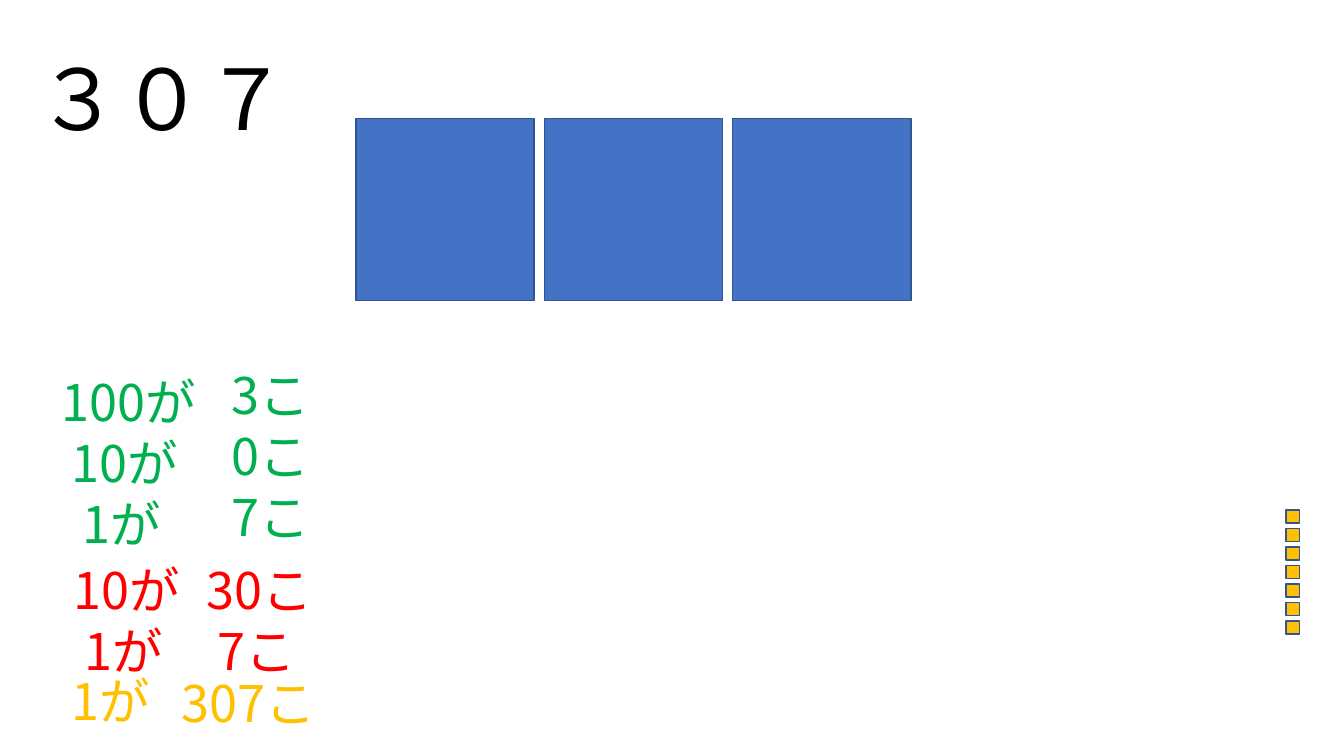
from pptx import Presentation
from pptx.dml.color import RGBColor
from pptx.enum.shapes import MSO_SHAPE
from pptx.enum.text import MSO_AUTO_SIZE
from pptx.util import Pt
from lxml.etree import SubElement
from pptx.oxml.ns import qn

THEME = {
    "font": "Noto Sans CJK JP",
    "title_size": 60,
    "count_size": 36,
    "line_height": 1.21,
    "black": RGBColor(0x00, 0x00, 0x00),
    "green": RGBColor(0x00, 0xB0, 0x50),
    "red": RGBColor(0xFF, 0x00, 0x00),
    "yellow": RGBColor(0xFF, 0xC0, 0x00),
    "blue": RGBColor(0x44, 0x72, 0xC4),
    "outline": RGBColor(0x32, 0x54, 0x91),
}


def add_lines(slide, left, top, width, lines, size, color):
    line_height = size * THEME["line_height"]
    box = slide.shapes.add_textbox(
        Pt(left), Pt(top), Pt(width), Pt(len(lines) * line_height + 7.2))
    text_frame = box.text_frame
    text_frame.word_wrap = True
    text_frame.auto_size = MSO_AUTO_SIZE.SHAPE_TO_FIT_TEXT
    text_frame.text = "\n".join(text for text, indent in lines)
    for paragraph, (text, indent) in zip(text_frame.paragraphs, lines):
        paragraph.line_spacing = Pt(line_height)
        paragraph._p.get_or_add_pPr().set("marL", str(Pt(indent)))
        font = paragraph.runs[0].font
        font.name = THEME["font"]
        font.size = Pt(size)
        font.color.rgb = THEME[color]
        SubElement(font._element, qn("a:ea")).set("typeface", THEME["font"])


def add_block(slide, left, top, width, height, color):
    shape = slide.shapes.add_shape(
        MSO_SHAPE.RECTANGLE, Pt(left), Pt(top), Pt(width), Pt(height))
    shape.shadow.inherit = False
    shape.fill.solid()
    shape.fill.fore_color.rgb = THEME[color]
    shape.line.color.rgb = THEME["outline"]
    shape.line.width = Pt(1)


presentation = Presentation()
presentation.slide_width = Pt(960)
presentation.slide_height = Pt(540)
slide = presentation.slides.add_slide(presentation.slide_layouts[6])

add_lines(slide, 18.7, 28.8, 254.9, [("３０７", 0)], THEME["title_size"], "black")

for hundred in range(3):
    add_block(slide, 254.2 + hundred * 134.6, 84.5, 127.4, 130.3, "blue")

for one in range(7):
    add_block(slide, 918.7, 364.3 + one * 13.2, 9.4, 9.4, "yellow")

count_boxes = [
    (150.5, 256.3, [("3こ", 8), ("0こ", 8), ("7こ", 8)], "green"),
    (28.1, 261, [("100が", 9), ("10が", 16), ("1が", 24)], "green"),
    (29.5, 395.3, [("10が", 16), ("1が", 24)], "red"),
    (132.5, 395.3, [("30こ", 8), ("7こ", 16)], "red"),
    (28.1, 474.5, [("1が", 16)], "yellow"),
    (114.5, 475.9, [("307こ", 8)], "yellow"),
]
for left, top, lines, color in count_boxes:
    add_lines(slide, left, top, 144, lines, THEME["count_size"], color)

presentation.save("out.pptx")
